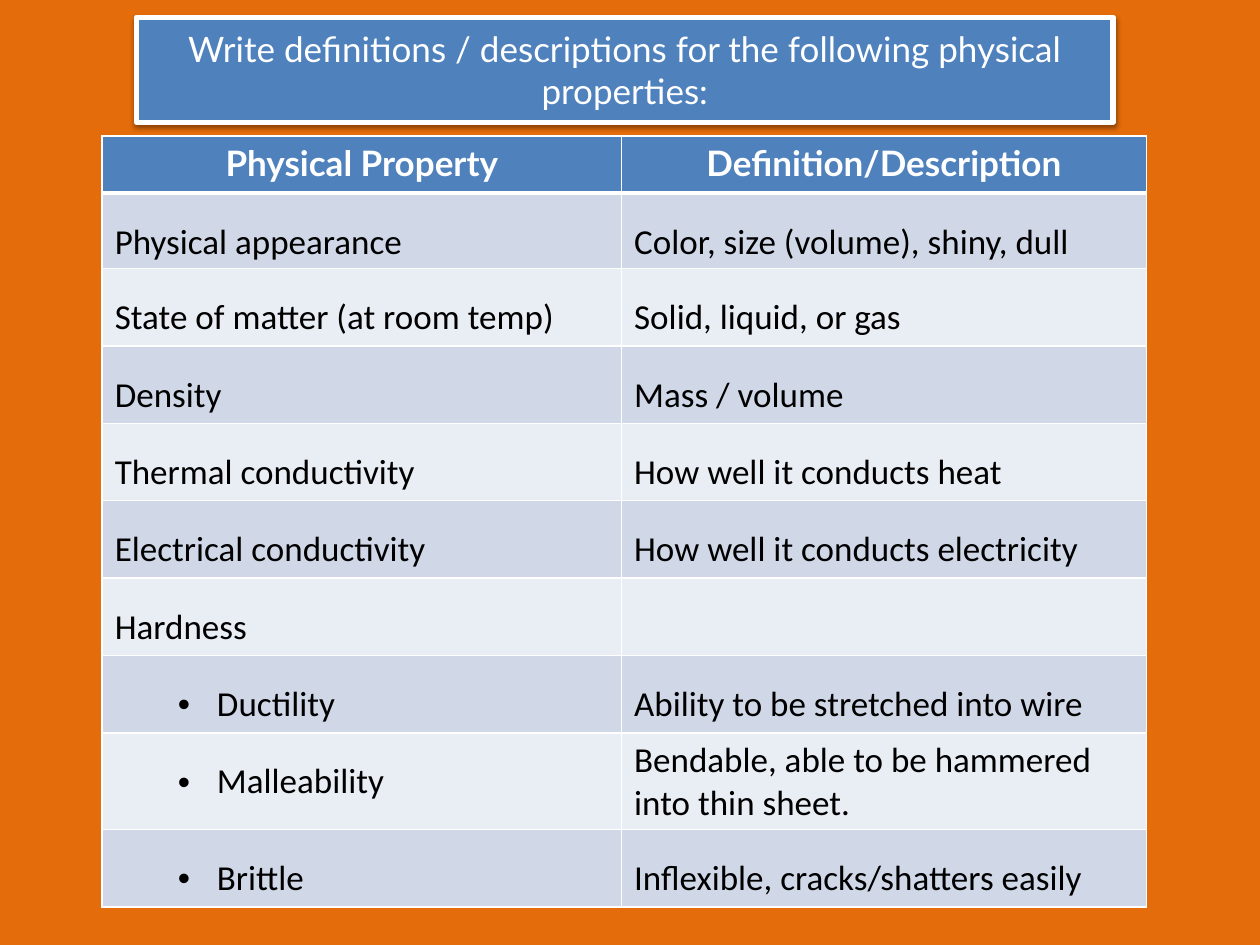
from lxml import etree
from pptx import Presentation
from pptx import util as u
from pptx.dml.color import RGBColor
from pptx.enum import text
from pptx.oxml import ns

ORANGE = RGBColor(0xE4, 0x6C, 0x0A)
BLUE = RGBColor(0x4F, 0x81, 0xBD)
BAND_DARK = RGBColor(0xD0, 0xD8, 0xE8)
BAND_LIGHT = RGBColor(0xE9, 0xED, 0xF4)
WHITE = RGBColor(0xFF, 0xFF, 0xFF)
BLACK = RGBColor(0, 0, 0)

TITLE = "Write definitions / descriptions for the following physical properties:"
HEADERS = ("Physical Property", "Definition/Description")
TWO_LINE_TEXT = "Bendable, able to be hammered into thin sheet."
PROPERTIES = [
    ("Physical appearance", "Color, size (volume), shiny, dull"),
    ("State of matter (at room temp)", "Solid, liquid, or gas"),
    ("Density", "Mass / volume"),
    ("Thermal conductivity", "How well it conducts heat"),
    ("Electrical conductivity", "How well it conducts electricity"),
    ("Hardness", ""),
    ("Ductility", "Ability to be stretched into wire"),
    ("Malleability", TWO_LINE_TEXT),
    ("Brittle", "Inflexible, cracks/shatters easily"),
]
KINDS_OF_HARDNESS = ("Ductility", "Malleability", "Brittle")

HEADING_FONT = {"name": "Lato", "size": u.Pt(20), "bold": False}
HEADER_FONT = {"name": "Lato", "size": u.Pt(20), "bold": True}
BODY_FONT = {"name": "Calibri", "size": u.Pt(20), "bold": False}
CENTERED = {"alignment": text.PP_ALIGN.CENTER}
SPACED = {"line_spacing": 1.5}
BULLETED = {"line_spacing": 1.5, "level": 1}


def set_values(target, values):
    for name, value in values.items():
        setattr(target, name, value)


def add_node(parent, tag, **attributes):
    return etree.SubElement(parent, ns.qn(tag), attributes)


class SlideBuilder:
    def __init__(self, slide, background):
        self.slide = slide
        slide.background.fill.solid()
        slide.background.fill.fore_color.rgb = background

    def add_words(self, para, words, font, color, para_format):
        set_values(para, para_format)
        if words:
            span = para.add_run()
            span.text = words
            set_values(span.font, font)
            span.font.color.rgb = color

    def title(self, words, place):
        box = self.slide.shapes.title
        set_values(box, place)
        box.fill.solid()
        box.fill.fore_color.rgb = BLUE
        box.line.color.rgb = WHITE
        box.line.width = u.Pt(3)
        self.shadow(box)
        frame = box.text_frame
        set_values(frame, {"word_wrap": True,
                           "auto_size": text.MSO_AUTO_SIZE.SHAPE_TO_FIT_TEXT,
                           "vertical_anchor": text.MSO_ANCHOR.MIDDLE})
        self.add_words(frame.paragraphs[0], words, HEADING_FONT, WHITE, CENTERED)

    def shadow(self, box):
        effects = add_node(box._element.spPr, "a:effectLst")
        shadow = add_node(effects, "a:outerShdw", blurRad=str(u.Pt(3.1)),
                          dist=str(u.Pt(1.6)), dir="5400000", rotWithShape="0")
        color = add_node(shadow, "a:srgbClr", val=str(BLACK))
        add_node(color, "a:alpha", val="38000")

    def table(self, place, widths, heights):
        frame = self.slide.shapes.add_table(len(heights), len(widths), **place)
        for column, width in zip(frame.table.columns, widths):
            column.width = u.Cm(width)
        for row, height in zip(frame.table.rows, heights):
            row.height = u.Cm(height)
        return frame.table

    def cell(self, cell, words, fill, font, color, para_format, bottom=1):
        self.borders(cell, {"L": 1, "R": 1, "T": 1, "B": bottom})
        cell.fill.solid()
        cell.fill.fore_color.rgb = fill
        self.add_words(cell.text_frame.paragraphs[0], words, font, color,
                       para_format)

    def borders(self, cell, widths):
        properties = cell._tc.get_or_add_tcPr()
        for side, width in widths.items():
            line = add_node(properties, f"a:ln{side}", w=str(u.Pt(width)))
            fill = add_node(line, "a:solidFill")
            add_node(fill, "a:srgbClr", val=str(WHITE))

    def bullet(self, para):
        properties = para._p.get_or_add_pPr()
        properties.set("marL", str(u.Cm(2.06)))
        properties.set("indent", str(u.Cm(-0.79)))
        add_node(properties, "a:buFont", typeface="Arial")
        add_node(properties, "a:buChar", char="•")


def main():
    deck = Presentation()
    deck.slide_width, deck.slide_height = u.Cm(25.4), u.Cm(19.05)
    title_only = deck.slide_layouts[5]
    page = SlideBuilder(deck.slides.add_slide(title_only), ORANGE)

    page.title(TITLE, {"left": u.Cm(2.75), "top": u.Cm(0.42),
                       "width": u.Cm(19.69), "height": u.Cm(1.97)})

    place = {"left": u.Cm(2.06), "top": u.Cm(2.74),
             "width": u.Cm(21.05), "height": u.Cm(15.6)}
    heights = [1.15, 1.42] + [1.56] * (len(PROPERTIES) - 1)
    table = page.table(place, (10.47, 10.58), heights)

    for column, words in enumerate(HEADERS):
        page.cell(table.cell(0, column), words, BLUE, HEADER_FONT, WHITE,
                  CENTERED, bottom=3)
    for row, entry in enumerate(PROPERTIES, start=1):
        band = BAND_DARK if row % 2 else BAND_LIGHT
        for column, words in enumerate(entry):
            cell = table.cell(row, column)
            bulleted = words in KINDS_OF_HARDNESS
            para_format = BULLETED if bulleted else SPACED
            if words in ("", TWO_LINE_TEXT):
                para_format = {}
            page.cell(cell, words, band, BODY_FONT, BLACK, para_format)
            if bulleted:
                page.bullet(cell.text_frame.paragraphs[0])

    deck.save("out.pptx")


if __name__ == "__main__":
    main()
